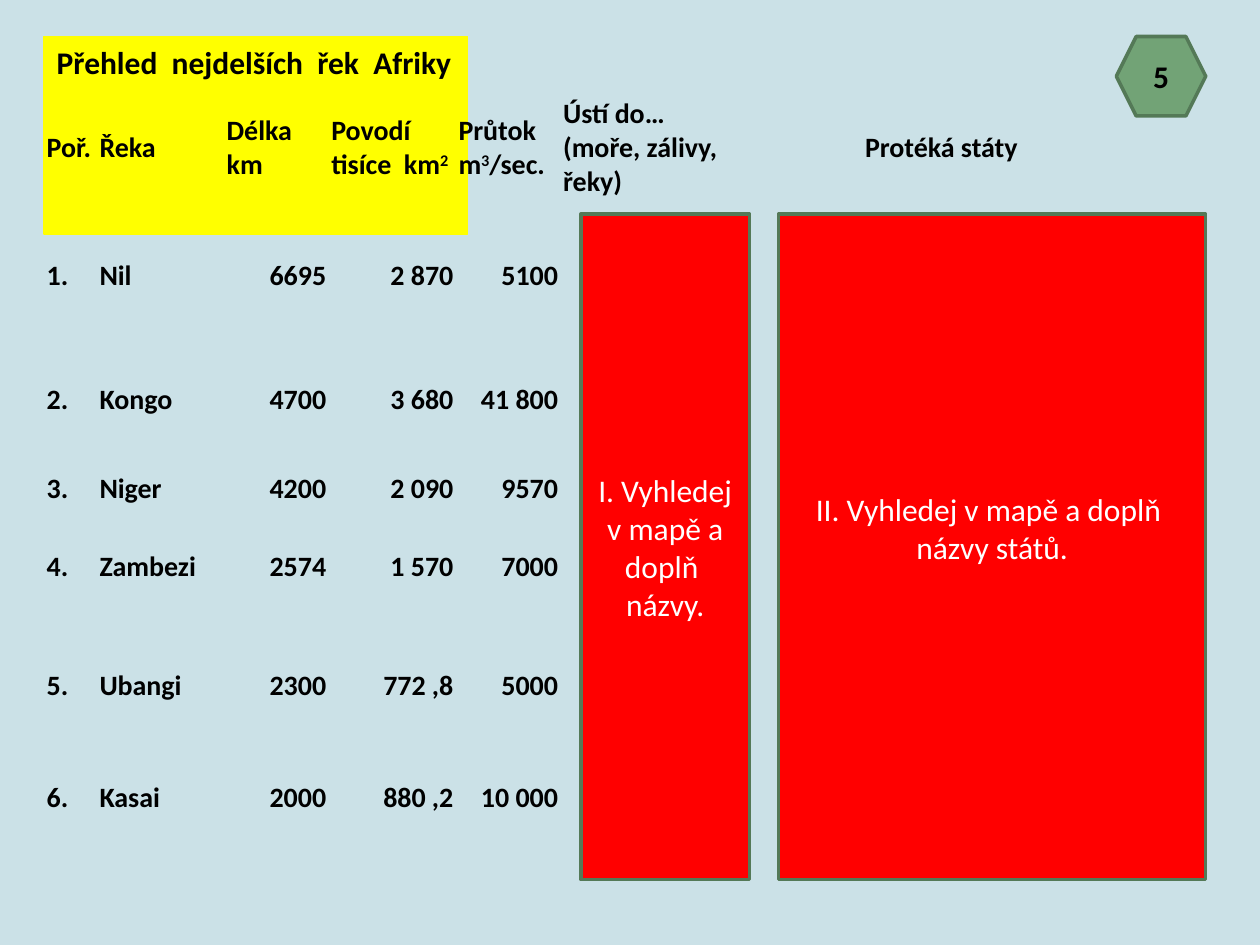
from dataclasses import dataclass

from pptx import Presentation
from pptx.dml.color import RGBColor
from pptx.enum.shapes import MSO_SHAPE
from pptx.enum.text import MSO_ANCHOR, MSO_AUTO_SIZE, PP_ALIGN
from pptx.util import Pt

TITLE = "Přehled  nejdelších  řek  Afriky"
NUMBER = "5"
# Text between carets is superscript.
HEADERS = ["Poř.", "Řeka", "Délka\nkm", "Povodí\ntisíce  km^2^", "Průtok\nm^3^/sec.",
           "Ústí do…\n(moře, zálivy,\nřeky)", "Protéká státy"]
RIVERS = [
    ("1.", "Nil", "6695", "2 870", "5100"),
    ("2.", "Kongo", "4700", "3 680", "41 800"),
    ("3.", "Niger", "4200", "2 090", "9570"),
    ("4.", "Zambezi", "2574", "1 570", "7000"),
    ("5.", "Ubangi", "2300", "772 ,8", "5000"),
    ("6.", "Kasai", "2000", "880 ,2", "10 000"),
]
MOUTH_TASK = "I. Vyhledej\nv mapě a\ndoplň \nnázvy."
STATES_TASK = "II. Vyhledej v mapě a doplň \nnázvy států."

COLUMN_WIDTHS = [30.2, 72.7, 59.8, 72.7, 59.8, 114.5, 253.4]
ROW_HEIGHTS = [71.3, 74.2, 67.7, 34.6, 54.7, 80.6, 48.2]
FIRST_NUMBER_COLUMN = 2
STATES_INDENT = 59.5
LEFT, TOP, RIGHT = 25.2, 20.9, 689
TABLE_TOP = 49
PANEL_TOP, PANEL_HEIGHT = 122.4, 380.2
MOUTH_WIDTH, STATES_WIDTH = 96.5, 244.1
LINE_HEIGHT = 22
NO_STYLE_NO_GRID = "{2D5ABB26-0587-4C30-8999-92F81FD0307C}"


@dataclass(frozen=True)
class Theme:
    font: str = "Calibri"
    table_size: int = 16
    text_size: int = 18
    background: str = "CBE1E7"
    text: str = "000000"
    light_text: str = "FFFFFF"
    title_fill: str = "FFFF00"
    panel_fill: str = "FF0000"
    badge_fill: str = "72A376"
    outline: str = "547957"


THEME = Theme()


def paint(shape, fill, line, width):
    shape.fill.solid()
    shape.fill.fore_color.rgb = RGBColor.from_string(fill)
    shape.line.color.rgb = RGBColor.from_string(line)
    shape.line.width = Pt(width)


def format_text(text_frame, size, color, bold, alignment):
    for paragraph in text_frame.paragraphs:
        paragraph.alignment = alignment
        for run in paragraph.runs:
            run.font.name = THEME.font
            run.font.size = Pt(size)
            run.font.bold = bold
            run.font.color.rgb = RGBColor.from_string(color)


def raise_marked_text(text_frame):
    """Turn the parts between carets into superscript runs."""
    for paragraph in text_frame.paragraphs:
        pieces = paragraph.text.split("^")
        if len(pieces) == 1:
            continue
        paragraph.text = pieces[0]
        for index, piece in enumerate(pieces[1:], start=1):
            if piece:
                run = paragraph.add_run()
                run.text = piece
                if index % 2:
                    run.font._element.set("baseline", "30000")


def add_title(slide):
    title = slide.shapes.title
    title.left, title.top, title.width, title.height = Pt(LEFT), Pt(TOP), Pt(241.9), Pt(29)
    paint(title, THEME.title_fill, THEME.title_fill, 0.75)
    text_frame = title.text_frame
    text_frame.text = TITLE
    text_frame.word_wrap = False
    text_frame.auto_size = MSO_AUTO_SIZE.SHAPE_TO_FIT_TEXT
    text_frame.vertical_anchor = MSO_ANCHOR.TOP
    format_text(text_frame, THEME.text_size, THEME.text, True, PP_ALIGN.LEFT)


def add_river_table(slide):
    frame = slide.shapes.add_table(
        len(ROW_HEIGHTS), len(COLUMN_WIDTHS), Pt(LEFT), Pt(TABLE_TOP),
        Pt(sum(COLUMN_WIDTHS)), Pt(sum(ROW_HEIGHTS)))
    table = frame.table
    table.first_row = table.horz_banding = False
    table._tbl.tblPr.find("{*}tableStyleId").text = NO_STYLE_NO_GRID
    for column, width in zip(table.columns, COLUMN_WIDTHS):
        column.width = Pt(width)
    for row, height in zip(table.rows, ROW_HEIGHTS):
        row.height = Pt(height)

    for cell in table.iter_cells():
        cell.fill.background()
        cell.vertical_anchor = MSO_ANCHOR.MIDDLE
        cell.margin_left = cell.margin_right = Pt(1.5)
        cell.margin_top = cell.margin_bottom = Pt(0.75)
    for row_index, values in enumerate([HEADERS, *RIVERS]):
        for column_index, value in enumerate(values):
            text_frame = table.cell(row_index, column_index).text_frame
            text_frame.text = value
            raise_marked_text(text_frame)
            is_number = row_index > 0 and column_index >= FIRST_NUMBER_COLUMN
            format_text(text_frame, THEME.table_size, THEME.text, True,
                        PP_ALIGN.RIGHT if is_number else PP_ALIGN.LEFT)
    table.cell(0, len(HEADERS) - 1).margin_left = Pt(STATES_INDENT)


def add_label(slide, kind, box, text, fill, color, bold=False):
    shape = slide.shapes.add_shape(kind, *(Pt(length) for length in box))
    shape.shadow.inherit = False
    paint(shape, fill, THEME.outline, 2)
    text_frame = shape.text_frame
    text_frame.text = text
    text_frame.word_wrap = True
    text_frame.vertical_anchor = MSO_ANCHOR.MIDDLE
    format_text(text_frame, THEME.text_size, color, bold, PP_ALIGN.CENTER)
    return shape


def main():
    presentation = Presentation()
    presentation.slide_width, presentation.slide_height = Pt(720), Pt(540)
    slide = presentation.slides.add_slide(presentation.slide_layouts[5])
    slide.background.fill.solid()
    slide.background.fill.fore_color.rgb = RGBColor.from_string(THEME.background)

    add_title(slide)
    add_river_table(slide)
    add_label(slide, MSO_SHAPE.HEXAGON, (RIGHT - 51.1, TOP, 51.1, 45.4),
              NUMBER, THEME.badge_fill, THEME.text, bold=True)
    states = add_label(
        slide, MSO_SHAPE.RECTANGLE,
        (RIGHT - STATES_WIDTH, PANEL_TOP, STATES_WIDTH, PANEL_HEIGHT),
        STATES_TASK, THEME.panel_fill, THEME.light_text)
    states.text_frame.margin_bottom += Pt(LINE_HEIGHT)
    add_label(slide, MSO_SHAPE.RECTANGLE, (331.9, PANEL_TOP, MOUTH_WIDTH, PANEL_HEIGHT),
              MOUTH_TASK, THEME.panel_fill, THEME.light_text)
    presentation.save("out.pptx")


if __name__ == "__main__":
    main()
